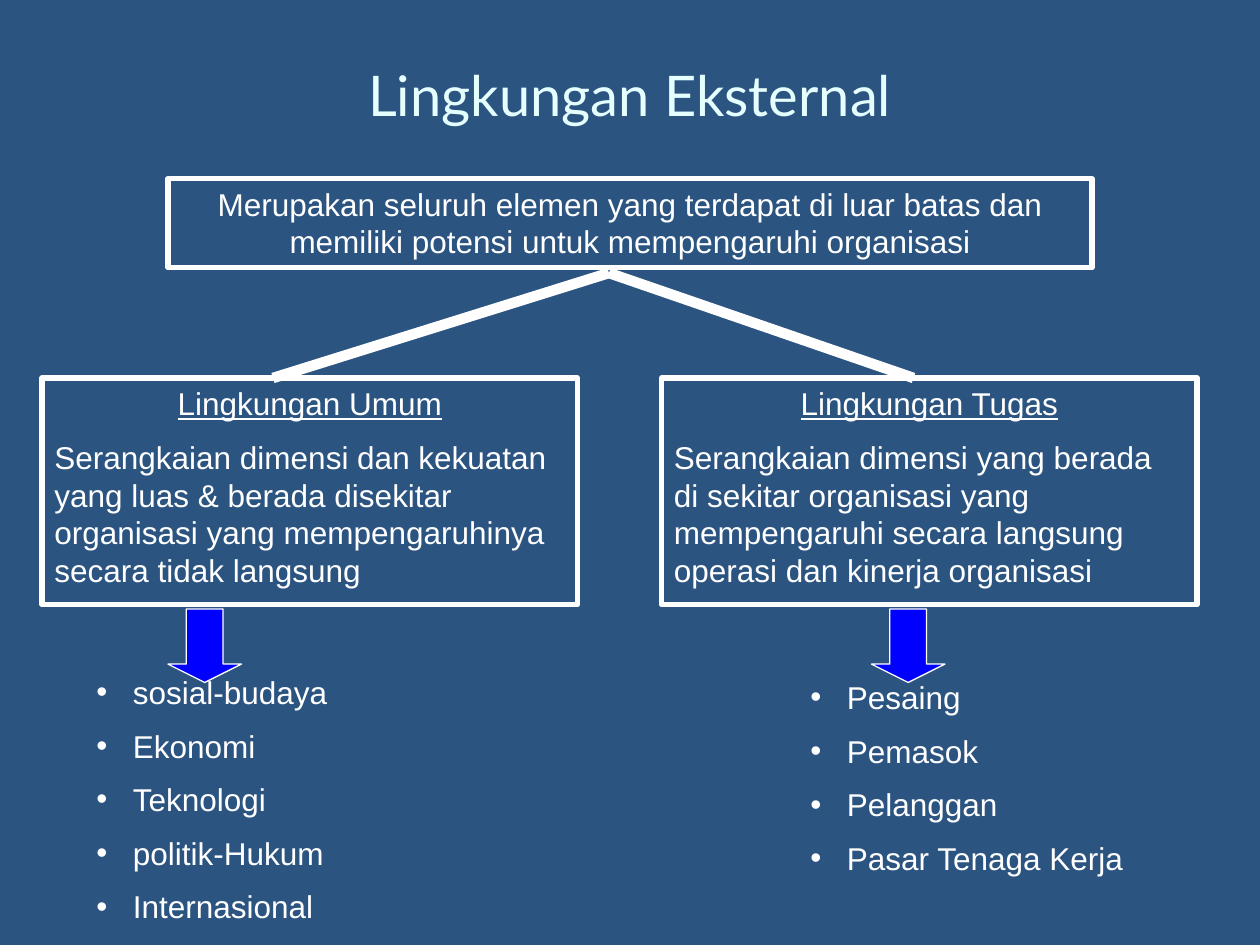
from dataclasses import dataclass

from lxml import etree
from pptx import Presentation
from pptx import util as u
from pptx.dml.color import RGBColor
from pptx.enum import shapes, text
from pptx.oxml.ns import qn

BACKGROUND = RGBColor(0x2B, 0x54, 0x81)
TITLE_COLOR = RGBColor(0xE5, 0xFF, 0xFF)
WHITE = RGBColor(0xFF, 0xFF, 0xFF)
BLUE = RGBColor(0x00, 0x00, 0xFF)

# The slide is a grid of 120 columns by 90 rows
COLUMNS, ROWS = 120, 90
SLIDE_WIDTH, SLIDE_HEIGHT = u.Inches(10), u.Inches(7.5)
CELL = SLIDE_WIDTH // COLUMNS

BULLET_INDENT = u.Inches(0.29)
LEFT, CENTER = text.PP_ALIGN.LEFT, text.PP_ALIGN.CENTER


@dataclass(frozen=True)
class Area:
    column: float
    row: float
    columns: float
    rows: float

    def lengths(self) -> list[int]:
        return [round(value * CELL)
                for value in (self.column, self.row, self.columns, self.rows)]


@dataclass(frozen=True)
class Branch:
    heading: str
    definition: str
    box: Area
    line_end: float
    arrow: Area
    items: tuple[str, ...]
    list_area: Area


BRANCHES = (
    Branch("Lingkungan Umum",
           "Serangkaian dimensi dan kekuatan yang luas & berada disekitar "
           "organisasi yang mempengaruhinya secara tidak langsung",
           Area(4, 36, 51, 21.6), 26, Area(16, 58, 7, 7),
           ("sosial-budaya", "Ekonomi", "Teknologi", "politik-Hukum", "Internasional"),
           Area(8, 63.5, 36, 26.5)),
    Branch("Lingkungan Tugas",
           "Serangkaian dimensi yang berada di sekitar organisasi yang "
           "mempengaruhi secara langsung operasi dan kinerja organisasi",
           Area(63, 36, 51, 21.6), 87, Area(83, 58, 7, 7),
           ("Pesaing", "Pemasok", "Pelanggan", "Pasar Tenaga Kerja"),
           Area(76, 64, 36, 21.1)),
)


def add_text(frame, content: str, *, size: float = 18, font: str = "Arial",
             color: RGBColor = WHITE, align=LEFT, underline: bool = False,
             bullet: bool = False) -> None:
    """Write one paragraph, using the empty first one when it is free."""
    first = frame.paragraphs[0]
    paragraph = frame.add_paragraph() if first.runs else first
    paragraph.alignment = align
    paragraph.space_before = u.Pt(0 if paragraph is first else 9)
    if bullet:
        properties = paragraph._p.get_or_add_pPr()
        properties.set("marL", str(BULLET_INDENT))
        properties.set("indent", str(-BULLET_INDENT))
        etree.SubElement(properties, qn("a:buFont"), typeface="Arial")
        etree.SubElement(properties, qn("a:buChar"), char="•")
    run = paragraph.add_run()
    run.text = content
    run.font.size = u.Pt(size)
    run.font.name = font
    run.font.color.rgb = color
    run.font.underline = underline


def add_text_area(slide, area: Area, anchor=text.MSO_ANCHOR.TOP):
    frame = slide.shapes.add_textbox(*area.lengths()).text_frame
    frame.word_wrap = True
    frame.vertical_anchor = anchor
    return frame


def add_box(slide, area: Area):
    shape = slide.shapes.add_shape(shapes.MSO_SHAPE.RECTANGLE, *area.lengths())
    shape.shadow.inherit = False
    shape.fill.background()
    shape.line.color.rgb = WHITE
    shape.line.width = u.Pt(3)
    frame = shape.text_frame
    frame.word_wrap = True
    frame.vertical_anchor = text.MSO_ANCHOR.TOP
    return frame


def add_arrow(slide, area: Area) -> None:
    shape = slide.shapes.add_shape(shapes.MSO_SHAPE.DOWN_ARROW, *area.lengths())
    shape.shadow.inherit = False
    shape.adjustments[0], shape.adjustments[1] = 0.5, 0.25
    shape.fill.solid()
    shape.fill.fore_color.rgb = BLUE
    shape.line.color.rgb = WHITE
    shape.line.width = u.Pt(0.75)


def add_line(slide, start: tuple[float, float], end: tuple[float, float]) -> None:
    ends = [round(value * CELL) for value in (*start, *end)]
    line = slide.shapes.add_connector(shapes.MSO_CONNECTOR.STRAIGHT, *ends)
    line.line.color.rgb = WHITE
    line.line.width = u.Pt(6)
    etree.SubElement(line._element.spPr, qn("a:effectLst"))


def main() -> None:
    presentation = Presentation()
    presentation.slide_width, presentation.slide_height = SLIDE_WIDTH, SLIDE_HEIGHT
    slide = presentation.slides.add_slide(presentation.slide_layouts[6])
    slide.background.fill.solid()
    slide.background.fill.fore_color.rgb = BACKGROUND

    # Title and definition
    title = add_text_area(slide, Area(6, 5, 108, 8), text.MSO_ANCHOR.MIDDLE)
    add_text(title, "Lingkungan Eksternal", size=32, font="Lato",
             color=TITLE_COLOR, align=CENTER)
    add_text(add_box(slide, Area(16, 17, 88, 8.5)),
             "Merupakan seluruh elemen yang terdapat di luar batas dan "
             "memiliki potensi untuk mempengaruhi organisasi", align=CENTER)

    # Two branches: box, list, arrow and line from the definition
    for branch in BRANCHES:
        box = add_box(slide, branch.box)
        add_text(box, branch.heading, align=CENTER, underline=True)
        add_text(box, branch.definition)
        item_list = add_text_area(slide, branch.list_area)
        for item in branch.items:
            add_text(item_list, item, bullet=True)
        add_arrow(slide, branch.arrow)
        add_line(slide, (58, 26), (branch.line_end, branch.box.row))

    presentation.save("out.pptx")


if __name__ == "__main__":
    main()
